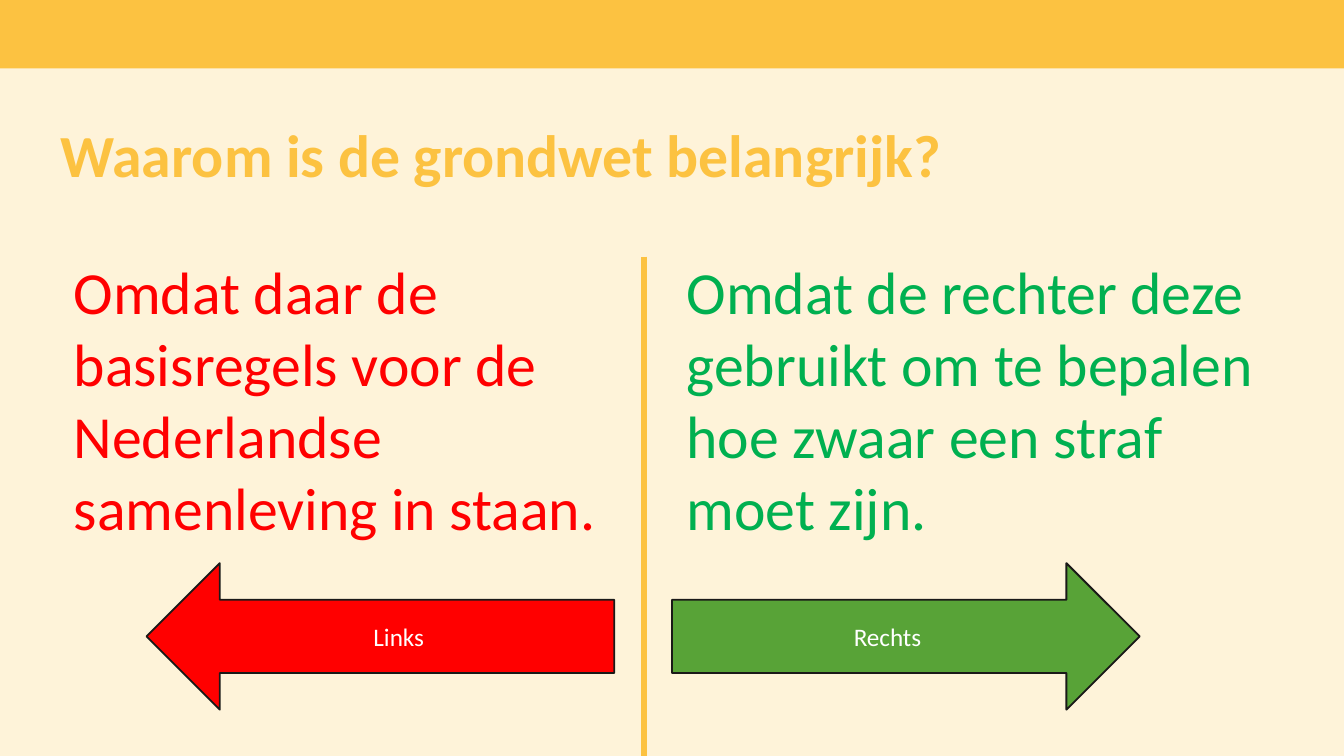
from lxml.etree import SubElement
from pptx import Presentation
from pptx.dml.color import RGBColor
from pptx.enum.shapes import MSO_CONNECTOR, MSO_SHAPE
from pptx.enum.text import MSO_ANCHOR, MSO_AUTO_SIZE, PP_ALIGN
from pptx.oxml.ns import qn
from pptx.util import Inches, Pt

COLORS = {
    "background": "FEF3D9",
    "accent": "FCC241",
    "red": "FF0000",
    "green_text": "00B050",
    "green_arrow": "58A337",
    "outline": "1A1918",
    "white": "FFFFFF",
}
WIDTH = 10
HEIGHT = WIDTH * 9 / 16
TITLE = "Waarom is de grondwet belangrijk?"
ANSWERS = [
    {
        "text": "Omdat daar de basisregels voor de Nederlandse samenleving in staan.",
        "left": 0.45, "width": 4.13, "color": "red",
        "label": "Links", "arrow": MSO_SHAPE.LEFT_ARROW,
        "arrow_left": 1.09, "arrow_color": "red",
    },
    {
        "text": "Omdat de rechter deze gebruikt om te bepalen hoe zwaar een straf moet zijn.",
        "left": 5.01, "width": 4.55, "color": "green_text",
        "label": "Rechts", "arrow": MSO_SHAPE.RIGHT_ARROW,
        "arrow_left": 5, "arrow_color": "green_arrow",
    },
]


def color(name):
    return RGBColor.from_string(COLORS[name])


def box(left, top, width, height):
    return [Inches(value) for value in (left, top, width, height)]


def write_text(shape, text, size=32, color_name="accent", bold=False,
               align=PP_ALIGN.LEFT, anchor=MSO_ANCHOR.TOP, line_spacing=None):
    frame = shape.text_frame
    frame.word_wrap = True
    frame.vertical_anchor = anchor
    paragraph = frame.paragraphs[0]
    paragraph.alignment = align
    paragraph.line_spacing = line_spacing
    run = paragraph.add_run()
    run.text = text
    run.font.name = "Calibri"
    run.font.size = Pt(size)
    run.font.bold = bold
    run.font.color.rgb = color(color_name)
    return frame


def add_filled_shape(slide, kind, position, fill, outline=None):
    shape = slide.shapes.add_shape(kind, *box(*position))
    shape.shadow.inherit = False
    shape.fill.solid()
    shape.fill.fore_color.rgb = color(fill)
    if outline:
        shape.line.color.rgb = color(outline)
        shape.line.width = Pt(1)
    else:
        shape.line.fill.background()
    return shape


def add_title(slide):
    title = slide.shapes.title
    title.left, title.top, title.width, title.height = box(0.45, 0.86, 9.55, 0.98)
    frame = write_text(title, TITLE, bold=True, line_spacing=Pt(36))
    frame.auto_size = MSO_AUTO_SIZE.NONE
    frame.margin_left = frame.margin_right = frame.margin_bottom = 0
    frame.margin_top = Inches(0.05)


def add_divider(slide):
    divider = slide.shapes.add_connector(
        MSO_CONNECTOR.STRAIGHT, *box(4.79, 1.91, 4.79, HEIGHT))
    divider.line.color.rgb = color("accent")
    divider.line.width = Pt(3)
    SubElement(divider._element.spPr, qn("a:effectLst"))


def add_answer(slide, answer):
    text_box = slide.shapes.add_textbox(*box(answer["left"], 1.85, answer["width"], 2.26))
    frame = write_text(text_box, answer["text"], color_name=answer["color"])
    frame.auto_size = MSO_AUTO_SIZE.SHAPE_TO_FIT_TEXT
    arrow = add_filled_shape(slide, answer["arrow"], (answer["arrow_left"], 4.19, 3.48, 1.09),
                             answer["arrow_color"], outline="outline")
    write_text(arrow, answer["label"], size=13.5, color_name="white",
               align=PP_ALIGN.CENTER, anchor=MSO_ANCHOR.MIDDLE)


def main():
    presentation = Presentation()
    presentation.slide_width = Inches(WIDTH)
    presentation.slide_height = Inches(HEIGHT)
    slide = presentation.slides.add_slide(presentation.slide_layouts[5])
    slide.background.fill.solid()
    slide.background.fill.fore_color.rgb = color("background")
    add_filled_shape(slide, MSO_SHAPE.RECTANGLE, (0, 0, WIDTH, 0.51), "accent")
    add_title(slide)
    add_divider(slide)
    for answer in ANSWERS:
        add_answer(slide, answer)
    presentation.save("out.pptx")


if __name__ == "__main__":
    main()
